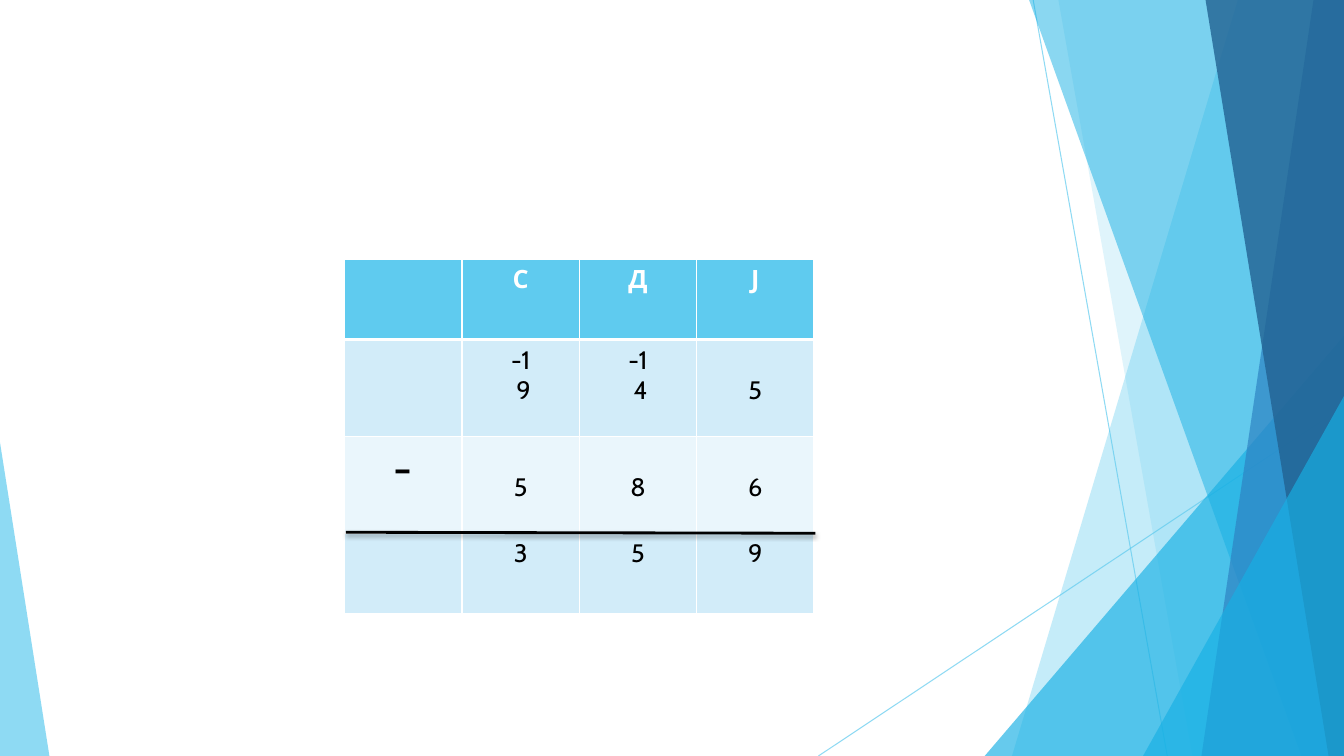
from dataclasses import dataclass

from lxml import etree
from pptx import Presentation
from pptx.dml.color import RGBColor
from pptx.enum.shapes import MSO_CONNECTOR, MSO_SHAPE
from pptx.enum.text import PP_ALIGN
from pptx.oxml.ns import qn
from pptx.util import Pt

STRAIGHT = MSO_CONNECTOR.STRAIGHT
TRIANGLE = MSO_SHAPE.ISOSCELES_TRIANGLE
CENTER = PP_ALIGN.CENTER


@dataclass(frozen=True)
class Theme:
    sky: str = "5FCBEF"
    cyan: str = "17B0E4"
    blue: str = "2E83C3"
    navy: str = "226292"
    pale: str = "D2ECF9"
    paler: str = "EAF6FC"
    white: str = "FFFFFF"
    black: str = "000000"
    font: str = "Cabin"
    digit_size: int = 18
    minus_size: int = 32
    line_height: int = 22
    cell_margin: float = 3.6


THEME = Theme()
SLIDE_WIDTH, SLIDE_HEIGHT = 960, 540

SUBTRACTION = [
    ["", "С", "Д", "Ј"],
    ["", "-1\n 9", "-1\n 4", "5"],
    ["-", "5", "8", "6"],
    ["", "3", "5", "9"],
]
ROW_FILLS = [THEME.sky, THEME.pale, THEME.paler, THEME.pale]
ROW_HEIGHTS = [57.6, 69.1, 69.1, 57.6]
ROW_BORDERS = [
    {"L": 1, "R": 1, "T": 1, "B": 3},
    {"L": 1, "R": 1, "T": 3, "B": 1},
    {"L": 1, "R": 1, "T": 1},
    {"L": 1, "R": 1, "B": 1},
]
LOWERED_CELLS = {(1, 3), (2, 1), (2, 2), (2, 3)}  # digits on the second text line
TABLE_LEFT, TABLE_TOP, COLUMN_WIDTH = 246.2, 185, 83.8
RESULT_LINE = (582.5, 380.9, 247, 380.2)

THIN_LINES = [(738, 0, 833.8, 540), (960, 290.2, 584.6, 540)]
# Bands reach the right edge: (top left x, bottom left x).
# Triangles: (left, top, width, height, apex position).
DECORATION = [
    ("band", (884.2, 722.9), THEME.sky, 36),
    ("band", (756, 851.8), THEME.sky, 20),
    ("triangle", (703.4, 239.8, 256.6, 300.2, 1), THEME.cyan, 66),
    ("band", (735.1, 929.5), THEME.cyan, 50),
    ("band", (938.2, 858.2), THEME.blue, 70),
    ("band", (861.1, 949), THEME.navy, 80),
    ("triangle", (816.5, 283, 143.5, 257, 1), THEME.cyan, 66),
    ("triangle", (0, 316.1, 35.3, 223.9, 0), THEME.sky, 70),
]


def rgb(color):
    return RGBColor.from_string(color)


def set_opacity(fill_parent, percent):
    color = next(fill_parent.iter(qn("a:srgbClr")))
    etree.SubElement(color, qn("a:alpha")).set("val", str(percent * 1000))


def add_line(slide, ends, color, width):
    """Return the line and its empty effect list."""
    line = slide.shapes.add_connector(STRAIGHT, *[Pt(value) for value in ends])
    line.line.color.rgb = rgb(color)
    line.line.width = Pt(width)
    effects = etree.SubElement(line._element.spPr, qn("a:effectLst"))
    return line, effects


def add_band(slide, top_x, bottom_x):
    corners = [(SLIDE_WIDTH, 0), (SLIDE_WIDTH, SLIDE_HEIGHT), (bottom_x, SLIDE_HEIGHT)]
    builder = slide.shapes.build_freeform(Pt(top_x), Pt(0))
    builder.add_line_segments([(Pt(x), Pt(y)) for x, y in corners], close=True)
    return builder.convert_to_shape()


def add_triangle(slide, left, top, width, height, apex):
    triangle = slide.shapes.add_shape(TRIANGLE, Pt(left), Pt(top), Pt(width), Pt(height))
    triangle.adjustments[0] = apex
    return triangle


def add_decoration(slide):
    for ends in THIN_LINES:
        line, _ = add_line(slide, ends, THEME.sky, 0.75)
        set_opacity(line._element.spPr, 70)
    makers = {"band": add_band, "triangle": add_triangle}
    for kind, geometry, color, opacity in DECORATION:
        shape = makers[kind](slide, *geometry)
        shape.shadow.inherit = False
        shape.fill.solid()
        shape.fill.fore_color.rgb = rgb(color)
        shape.line.fill.background()
        set_opacity(shape._element.spPr, opacity)


def add_borders(cell, widths):
    properties = cell._tc.get_or_add_tcPr()
    for side, width in widths.items():
        border = etree.SubElement(properties, qn(f"a:ln{side}"), w=str(Pt(width)))
        fill = etree.SubElement(border, qn("a:solidFill"))
        etree.SubElement(fill, qn("a:srgbClr"), val=THEME.white)


def fill_cell(cell, text, row, column):
    add_borders(cell, ROW_BORDERS[row])
    cell.fill.solid()
    cell.fill.fore_color.rgb = rgb(ROW_FILLS[row])
    lowered = THEME.line_height if (row, column) in LOWERED_CELLS else 0
    cell.margin_top = Pt(THEME.cell_margin + lowered)
    cell.text_frame.text = text
    for para in cell.text_frame.paragraphs:
        para.alignment = CENTER
        for span in para.runs:
            span.font.name = THEME.font
            span.font.size = Pt(THEME.minus_size if text == "-" else THEME.digit_size)
            span.font.bold = row == 0
            span.font.color.rgb = rgb(THEME.white if row == 0 else THEME.black)


def add_subtraction(slide):
    row_count, column_count = len(SUBTRACTION), len(SUBTRACTION[0])
    table = slide.shapes.add_table(
        row_count, column_count, Pt(TABLE_LEFT), Pt(TABLE_TOP),
        Pt(COLUMN_WIDTH * column_count), Pt(sum(ROW_HEIGHTS)),
    ).table
    for column in table.columns:
        column.width = Pt(COLUMN_WIDTH)
    for row, texts in enumerate(SUBTRACTION):
        table.rows[row].height = Pt(ROW_HEIGHTS[row])
        for column, text in enumerate(texts):
            fill_cell(table.cell(row, column), text, row, column)


def add_result_line(slide):
    _, effects = add_line(slide, RESULT_LINE, THEME.black, 2)
    shadow = etree.SubElement(
        effects, qn("a:outerShdw"), blurRad=str(Pt(3)), dist=str(Pt(2)),
        dir=str(90 * 60000), rotWithShape="0",
    )
    etree.SubElement(shadow, qn("a:srgbClr"), val=THEME.black)
    set_opacity(shadow, 35)


def main():
    deck = Presentation()
    deck.slide_width, deck.slide_height = Pt(SLIDE_WIDTH), Pt(SLIDE_HEIGHT)
    slide = deck.slides.add_slide(deck.slide_layouts[6])
    add_decoration(slide)
    add_subtraction(slide)
    add_result_line(slide)
    deck.save("out.pptx")


if __name__ == "__main__":
    main()
